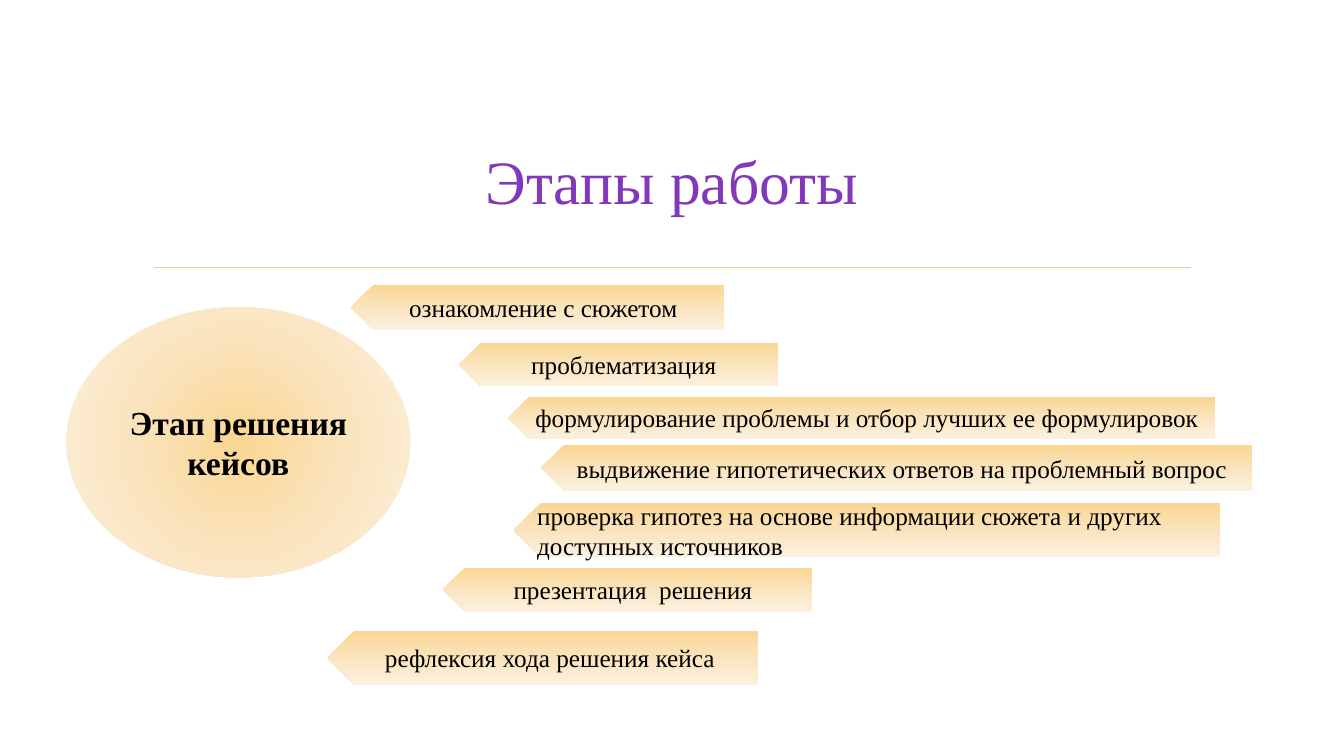
from dataclasses import dataclass

from pptx import Presentation
from pptx.dml.color import RGBColor
from pptx.enum.shapes import MSO_CONNECTOR, MSO_SHAPE as SHAPE
from pptx.enum.text import MSO_ANCHOR, PP_ALIGN as ALIGN
from pptx.oxml import parse_xml
from pptx.oxml.ns import nsdecls, qn
from pptx.oxml.xmlchemy import OxmlElement
from pptx.util import Pt

FONT = "Times New Roman"
COLORS = {
    "title": "8238BA",
    "rule": "E8D191",
    "text": "000000",
    "grad_start": "FAD693",
    "grad_middle": "FAE4BE",
    "grad_end": "FCF1DF",
}
STOPS = {0: "grad_start", 50: "grad_middle", 100: "grad_end"}
DOWNWARD = '<a:lin ang="5400000" scaled="0"/>'
FROM_CENTRE = (
    '<a:path path="circle">'
    '<a:fillToRect l="50000" t="50000" r="50000" b="50000"/></a:path>'
)


@dataclass
class Step:
    text: str
    left: float
    top: float
    width: float
    height: float
    align: ALIGN = ALIGN.CENTER


STEPS = [
    Step("ознакомление с сюжетом", 250.5, 203.5, 267, 32.5),
    Step("проблематизация", 328, 245, 227.5, 31),
    Step("формулирование проблемы и отбор лучших ее формулировок",
         363, 283.5, 505, 30),
    Step("выдвижение гипотетических ответов на проблемный вопрос",
         386.5, 318, 507.5, 32.5),
    Step("проверка гипотез на основе информации сюжета и других\n"
         "доступных источников", 367, 359.5, 505, 38.5, ALIGN.LEFT),
    Step("презентация  решения", 316.5, 405.5, 263.5, 31.5),
    Step("рефлексия хода решения кейса", 234, 450.5, 308, 38.5),
]


def rgb(name: str) -> RGBColor:
    return RGBColor.from_string(COLORS[name])


def write(s, text: str, size: float, color: str = "text",
          align: ALIGN = ALIGN.CENTER, bold: bool = False) -> None:
    tf = s.text_frame
    tf.word_wrap = True
    tf.vertical_anchor = MSO_ANCHOR.MIDDLE
    tf.text = text
    for p in tf.paragraphs:
        p.alignment = align
        for r in p.runs:
            r.font.name = FONT
            r.font.size = Pt(size)
            r.font.bold = bold
            r.font.color.rgb = rgb(color)


def add_gradient_shape(slide, kind: SHAPE, left: float, top: float,
                       width: float, height: float, direction: str):
    s = slide.shapes.add_shape(kind, Pt(left), Pt(top), Pt(width), Pt(height))
    s.shadow.inherit = False
    s.line.fill.background()
    s.fill.gradient()
    stops = "".join(
        f'<a:gs pos="{pos * 1000}"><a:srgbClr val="{COLORS[name]}"/></a:gs>'
        for pos, name in STOPS.items()
    )
    gradient = parse_xml(
        f'<a:gradFill {nsdecls("a")} rotWithShape="1">'
        f"<a:gsLst>{stops}</a:gsLst>{direction}</a:gradFill>"
    )
    sp_pr = s._element.spPr
    sp_pr.replace(sp_pr.find(qn("a:gradFill")), gradient)
    return s


def add_step(slide, step: Step) -> None:
    """Draw one step as a pentagon pointing left."""
    s = add_gradient_shape(slide, SHAPE.PENTAGON, step.left, step.top,
                           step.width, step.height, DOWNWARD)
    s._element.spPr.find(qn("a:xfrm")).set("flipH", "1")
    write(s, step.text, 18, align=step.align)


def add_rule(slide) -> None:
    """Draw the thin line under the title."""
    s = slide.shapes.add_connector(
        MSO_CONNECTOR.STRAIGHT, Pt(110), Pt(191), Pt(850.5), Pt(191))
    s.line.color.rgb = rgb("rule")
    s.line.width = Pt(1.25)
    s._element.spPr.append(OxmlElement("a:effectLst"))


def main() -> None:
    prs = Presentation()
    prs.slide_width, prs.slide_height = Pt(960), Pt(540)
    slide = prs.slides.add_slide(prs.slide_layouts[6])

    add_rule(slide)
    title = slide.shapes.add_textbox(Pt(102), Pt(77), Pt(756), Pt(103))
    write(title, "Этапы работы", 44, "title")
    for step in STEPS:
        add_step(slide, step)
    stage = add_gradient_shape(slide, SHAPE.OVAL, 47.5, 219.5, 245.5, 193,
                               FROM_CENTRE)
    write(stage, "Этап решения кейсов", 24, bold=True)

    prs.save("out.pptx")


if __name__ == "__main__":
    main()
